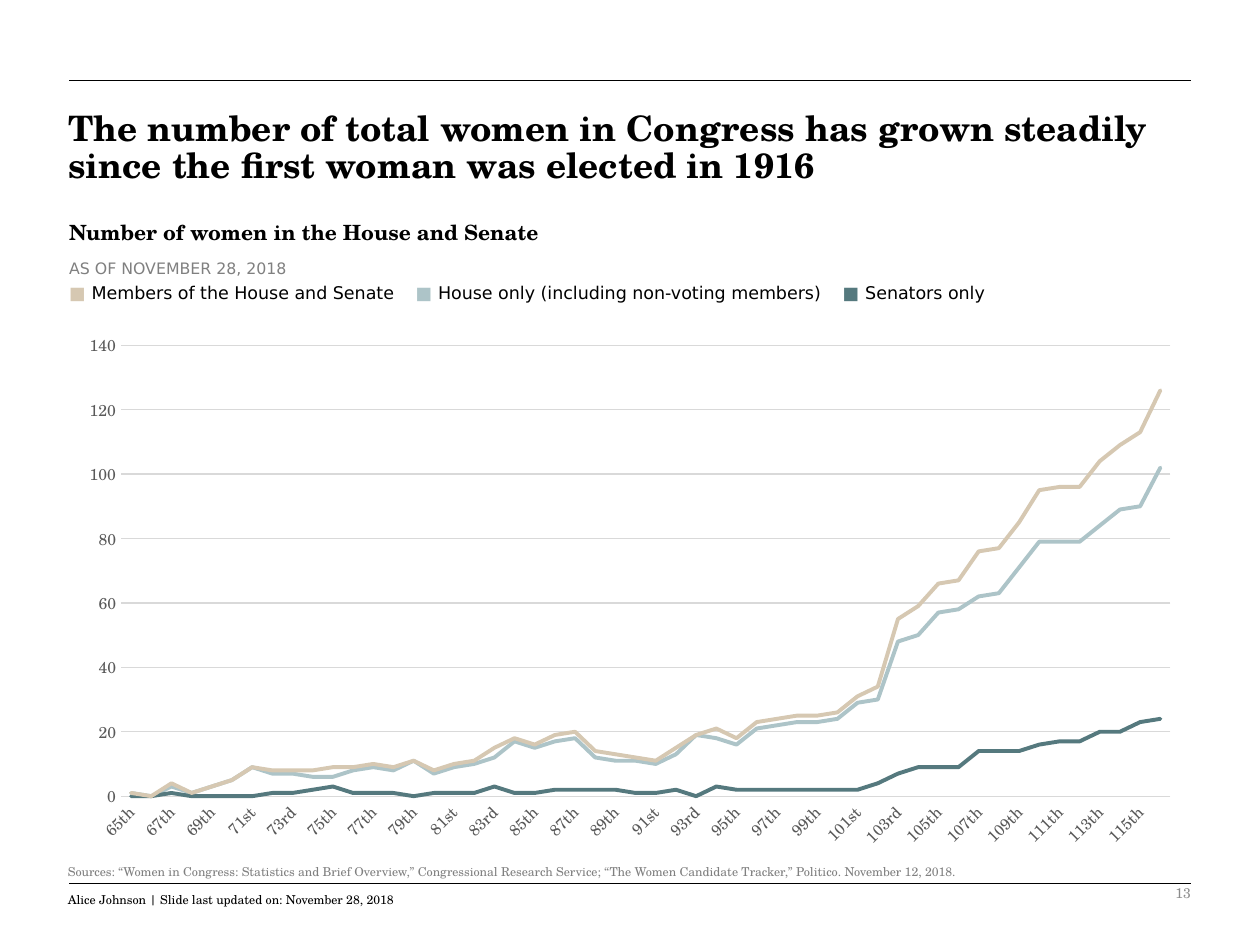
from lxml import etree
from pptx import Presentation
from pptx.chart.data import CategoryChartData
from pptx.dml.color import RGBColor
from pptx.enum.chart import XL_CHART_TYPE, XL_TICK_MARK
from pptx.enum.shapes import MSO_CONNECTOR
from pptx.enum.text import MSO_ANCHOR, MSO_AUTO_SIZE, PP_ALIGN
from pptx.oxml import parse_xml
from pptx.oxml.ns import nsdecls, qn
from pptx.util import Inches, Pt

# Content
COLORS = {"black": "000000", "gray": "808080", "number": "8C8C8C", "axis": "595959",
          "grid": "D9D9D9", "total": "D6C8B2", "house": "ADC4C8", "senate": "55797E"}
SERIF, SANS = "TeX Gyre Schola", "DejaVu Sans"

TITLE = ("The number of total women in Congress has grown steadily "
         "since the first woman was elected in 1916")
SUBTITLE = "Number of women in the House and Senate"
AS_OF = "AS OF NOVEMBER 28, 2018"
SOURCES = ("Sources: “Women in Congress: Statistics and Brief Overview,” Congressional Research "
           "Service; “The Women Candidate Tracker,” Politico. November 12, 2018.")
FOOTER = "Alice Johnson | Slide last updated on: November 28, 2018"
PAGE = "13"
LEGEND = [("total", "Members of the House and Senate"),
          ("house", "House only (including non-voting members)"),
          ("senate", "Senators only")]
LEGEND_TABS = [2.75, 6.14]

HOUSE = [1, 0, 3, 1, 3, 5, 9, 7, 7, 6, 6, 8, 9, 8, 11, 7, 9, 10, 12, 17, 15, 17, 18, 12, 11, 11,
         10, 13, 19, 18, 16, 21, 22, 23, 23, 24, 29, 30, 48, 50, 57, 58, 62, 63, 71, 79, 79, 79,
         84, 89, 90, 102]
SENATE = [0, 0, 1, 0, 0, 0, 0, 1, 1, 2, 3, 1, 1, 1, 0, 1, 1, 1, 3, 1, 1, 2, 2, 2, 2, 1,
          1, 2, 0, 3, 2, 2, 2, 2, 2, 2, 2, 4, 7, 9, 9, 9, 14, 14, 14, 16, 17, 17,
          20, 20, 23, 24]
TOTAL = [1, 0, 4, 1, 3, 5, 9, 8, 8, 8, 9, 9, 10, 9, 11, 8, 10, 11, 15, 18, 16, 19, 20, 14, 13, 12,
         11, 15, 19, 21, 18, 23, 24, 25, 25, 26, 31, 34, 55, 59, 66, 67, 76, 77, 85, 95, 96, 96,
         104, 109, 113, 126]
SERIES = [("Series 1", "house", HOUSE), ("Series 2", "senate", SENATE),
          ("Series 3", "total", TOTAL)]
FIRST_CONGRESS = 65
CHART_BOX = (0.53, 2.56, 8.93, 4.26)
PLOT_BOX = (0.96, 2.74, 8.33, 3.58)


def rgb(name):
    return RGBColor.from_string(COLORS[name])


def ordinal(n):
    teen = 10 <= n % 100 <= 20
    return f"{n}{'th' if teen else {1: 'st', 2: 'nd', 3: 'rd'}.get(n % 10, 'th')}"


def style_font(font, size, color, name=SERIF, bold=False):
    font.size, font.name, font.bold = Pt(size), name, bold
    font.color.rgb = rgb(color)


def add_run(p, text, *style):
    r = p.add_run()
    r.text = text
    style_font(r.font, *style)


def fill_text(sp, box, runs, spacing=None, align=PP_ALIGN.LEFT, anchor=MSO_ANCHOR.TOP):
    sp.left, sp.top, sp.width, sp.height = map(Inches, box)
    tf = sp.text_frame
    tf.word_wrap, tf.auto_size, tf.vertical_anchor = True, MSO_AUTO_SIZE.NONE, anchor
    p = tf.paragraphs[0]
    p.alignment, p.line_spacing = align, spacing
    for run in runs:
        add_run(p, *run)
    return p


def add_text(s, box, *args, **kwargs):
    return fill_text(s.shapes.add_textbox(0, 0, 0, 0), box, *args, **kwargs)


def add_rule(s, y):
    line = s.shapes.add_connector(MSO_CONNECTOR.STRAIGHT, Inches(0.55), Inches(y),
                                  Inches(9.45), Inches(y))
    line.line.color.rgb, line.line.width = rgb("black"), Pt(0.5)
    etree.SubElement(line._element.spPr, qn("a:effectLst"))


def add_legend(s):
    runs = []
    for i, (color, label) in enumerate(LEGEND):
        end = "\t" if i < len(LEGEND) - 1 else ""
        runs += [("■ ", 10, color, SANS, True), (label + end, 10, "black", SANS)]
    p = add_text(s, (0.45, 2.19, 7.7, 0.27), runs)
    tabs = etree.SubElement(p._p.get_or_add_pPr(), qn("a:tabLst"))
    for stop in LEGEND_TABS:
        etree.SubElement(tabs, qn("a:tab"), pos=str(Inches(stop)), algn="l")


def add_line_chart(s):
    data = CategoryChartData()
    data.categories = [ordinal(FIRST_CONGRESS + i) for i in range(len(TOTAL))]
    for name, _, values in SERIES:
        data.add_series(name, values)
    chart = s.shapes.add_chart(XL_CHART_TYPE.LINE, *map(Inches, CHART_BOX), data).chart
    chart.has_legend = chart.has_title = False
    style_font(chart.font, 10, "black")

    for series, (_, color, _) in zip(chart.plots[0].series, SERIES):
        series.smooth = False
        line = series.format.line
        line.color.rgb, line.width = rgb(color), Pt(2.25)
        series._element.spPr.find(qn("a:ln")).set("cap", "rnd")

    cat, val = chart.category_axis, chart.value_axis
    for axis in (cat, val):
        axis.major_tick_mark = axis.minor_tick_mark = XL_TICK_MARK.NONE
        style_font(axis.tick_labels.font, 9, "axis")
    val.minimum_scale, val.maximum_scale, val.major_unit = 0, 140, 20
    val.has_major_gridlines = True
    val.format.line.fill.background()
    for line in (cat.format.line, val.major_gridlines.format.line):
        line.color.rgb, line.width = rgb("grid"), Pt(0.75)

    # Slanted labels on every second Congress
    cat._element.find(qn("c:txPr")).find(qn("a:bodyPr")).set("rot", "-2700000")
    skip = parse_xml(f'<c:tickLblSkip {nsdecls("c")} val="2"/>')
    cat._element.find(qn("c:noMultiLvlLbl")).addprevious(skip)

    # Fixed inner plot area, as fractions of the chart
    left, top, width, height = CHART_BOX
    x, y, w, h = PLOT_BOX
    parts = {"x": (x - left) / width, "y": (y - top) / height, "w": w / width, "h": h / height}
    modes = "".join(f'<c:{k}Mode val="edge"/>' for k in "xy")
    sizes = "".join(f'<c:{k} val="{v:.4f}"/>' for k, v in parts.items())
    layout = parse_xml(f'<c:layout {nsdecls("c")}><c:manualLayout><c:layoutTarget val="inner"/>'
                       f'{modes}{sizes}</c:manualLayout></c:layout>')
    area = chart._chartSpace.chart.plotArea
    for old in area.findall(qn("c:layout")):
        area.remove(old)
    area.insert(0, layout)


def main():
    prs = Presentation()
    prs.slide_width, prs.slide_height = Inches(10), Inches(7.5)
    s = prs.slides.add_slide(prs.slide_layouts[5])

    # Rules above the title and the footer
    for y in (7.01, 0.64):
        add_rule(s, y)

    # Footer
    add_text(s, (0.44, 7.02, 3.33, 0.37), [(FOOTER, 7, "black")], spacing=1.1)
    add_text(s, (0.44, 6.8, 9.02, 0.21), [(SOURCES, 7, "gray")], spacing=1.1)
    add_text(s, (7.06, 6.89, 2.49, 0.4), [(PAGE, 8, "number")],
             align=PP_ALIGN.RIGHT, anchor=MSO_ANCHOR.MIDDLE)

    # Headings
    fill_text(s.shapes.title, (0.44, 0.83, 9.2, 0.7),
              [(TITLE, 20, "black", SERIF, True)], spacing=0.9)
    add_text(s, (0.45, 1.69, 9, 0.3), [(SUBTITLE, 12, "black", SERIF, True)])
    add_text(s, (0.45, 1.99, 8.11, 0.19), [(AS_OF, 9, "gray", SANS)], spacing=1.1)

    # Legend and chart
    add_legend(s)
    add_line_chart(s)
    prs.save("out.pptx")


if __name__ == "__main__":
    main()
